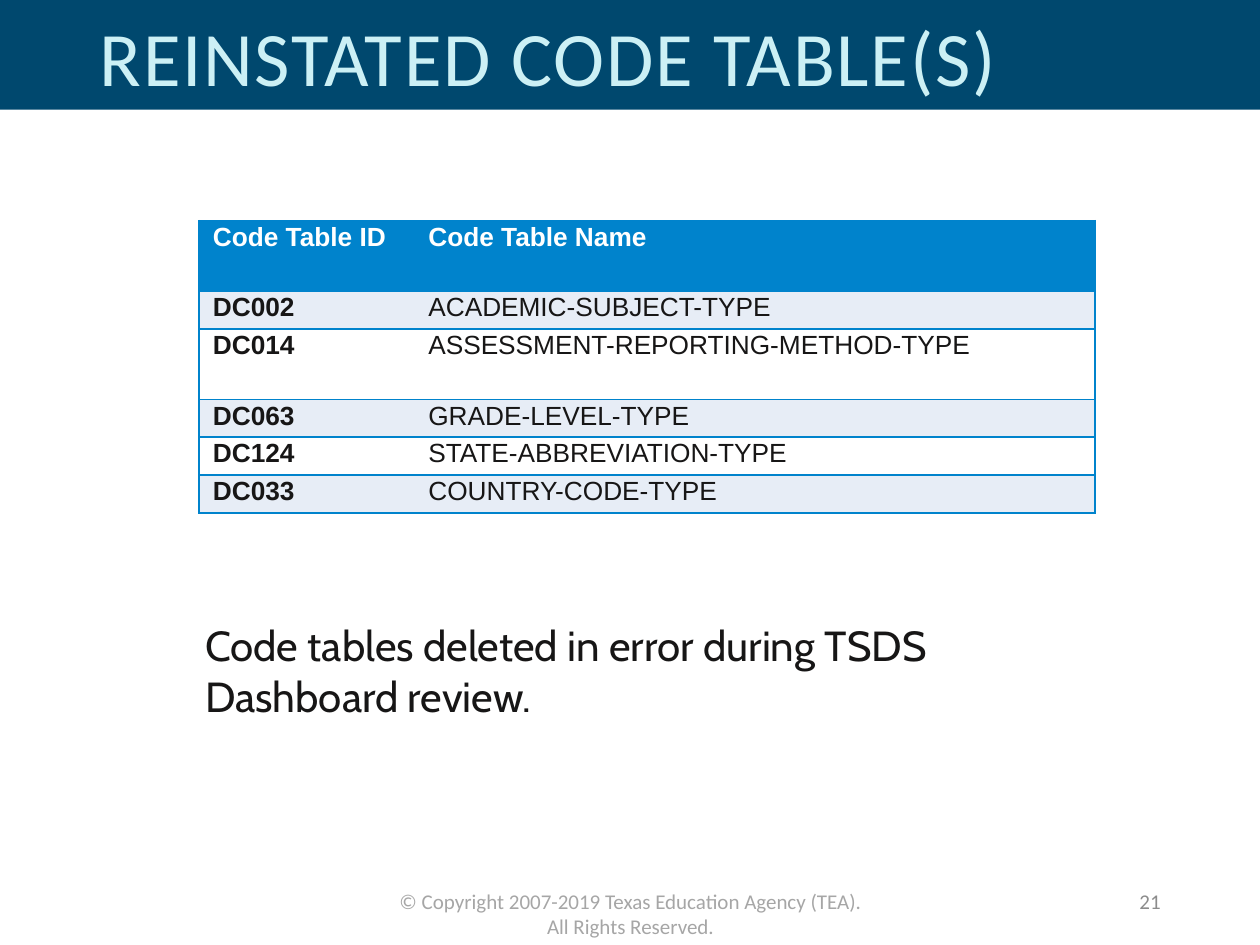
from dataclasses import dataclass, field

from lxml.etree import SubElement
from pptx import Presentation
from pptx.dml.color import RGBColor
from pptx.enum.shapes import MSO_SHAPE as Shape
from pptx.enum.text import MSO_ANCHOR as Anchor, MSO_AUTO_SIZE as AutoSize, PP_ALIGN as Align
from pptx.oxml.ns import qn
from pptx.util import Inches, Pt

NAVY, BLUE, PALE, WHITE, INK = "00486E", "0083CC", "E7EDF6", "FFFFFF", "171616"
COLUMN_WIDTHS = (1.71, 5.4)
SHORT_ROW, TALL_ROW = 0.3, 0.56


@dataclass
class Style:
    size: float
    font: str
    color: str
    bold: bool = False
    paragraph: dict = field(default_factory=dict)


@dataclass
class Label:
    text: str
    place: tuple
    style: Style
    frame: dict = field(default_factory=dict)


@dataclass
class TableRow:
    code: str
    name: str
    height: float = SHORT_ROW


ROWS = [
    TableRow("Code Table ID", "Code Table Name", TALL_ROW),
    TableRow("DC002", "ACADEMIC-SUBJECT-TYPE"),
    TableRow("DC014", "ASSESSMENT-REPORTING-METHOD-TYPE", TALL_ROW),
    TableRow("DC063", "GRADE-LEVEL-TYPE"),
    TableRow("DC124", "STATE-ABBREVIATION-TYPE"),
    TableRow("DC033", "COUNTRY-CODE-TYPE"),
]
LABELS = [
    Label("© Copyright 2007-2019 Texas Education Agency (TEA). All Rights Reserved.",
          (3.04, 7, 3.93, 0.3),
          Style(12, "Calibri", "A6A6A6", paragraph={"alignment": Align.CENTER})),
    Label("21", (7.06, 6.95, 2.25, 0.4),
          Style(12, "Calibri", "8C8C8C",
                paragraph={"alignment": Align.RIGHT, "space_after": Pt(6)}),
          {"vertical_anchor": Anchor.MIDDLE}),
    Label("Code tables deleted in error during TSDS Dashboard review.",
          (1.53, 4.87, 7.22, 0.91), Style(24, "Cabin", INK)),
]


def rgb(value: str) -> RGBColor:
    return RGBColor.from_string(value)


def apply(target, values: dict) -> None:
    for name, value in values.items():
        setattr(target, name, value)


def inches(place: tuple) -> list:
    return [Inches(length) for length in place]


def write(frame, text: str, style: Style):
    para = frame.paragraphs[0]
    apply(para, style.paragraph)
    span = para.add_run()
    span.text = text
    apply(span.font, {"size": Pt(style.size), "name": style.font, "bold": style.bold})
    span.font.color.rgb = rgb(style.color)
    return span


def add_band(page) -> None:
    band = page.shapes.add_shape(Shape.RECTANGLE, *inches((0, 0, 10, 0.87)))
    band.shadow.inherit = False
    band.fill.solid()
    band.fill.fore_color.rgb = rgb(NAVY)
    band.line.fill.background()
    page.shapes._spTree.insert(2, band._element)


def add_title(page, text: str) -> None:
    title = page.shapes.title
    apply(title, dict(zip(("left", "top", "width", "height"), inches((0.69, 0.05, 8, 0.87)))))
    apply(title.text_frame, {"vertical_anchor": Anchor.MIDDLE, "word_wrap": True,
                             "auto_size": AutoSize.NONE})
    style = Style(44, "Calibri", "CCF0F5",
                  paragraph={"alignment": Align.LEFT, "line_spacing": 0.9})
    span = write(title.text_frame, text, style)
    span.font._element.set("spc", "100")


def add_label(page, label: Label) -> None:
    box = page.shapes.add_textbox(*inches(label.place))
    apply(box.text_frame, {"word_wrap": True, **label.frame})
    write(box.text_frame, label.text, label.style)


def set_borders(cell, hidden_side: str) -> None:
    properties = cell._tc.get_or_add_tcPr()
    for side in ("lnL", "lnR", "lnT", "lnB"):
        line = SubElement(properties, qn(f"a:{side}"), w=str(Pt(1)))
        if side == hidden_side:
            SubElement(line, qn("a:noFill"))
        else:
            SubElement(SubElement(line, qn("a:solidFill")), qn("a:srgbClr"), val=BLUE)


def add_code_table(page) -> None:
    size = (sum(COLUMN_WIDTHS), sum(row.height for row in ROWS))
    table = page.shapes.add_table(len(ROWS), len(COLUMN_WIDTHS),
                                  *inches((1.58, 1.75, *size))).table
    apply(table, {"first_row": True, "horz_banding": False})
    for column, width in zip(table.columns, COLUMN_WIDTHS):
        column.width = Inches(width)
    for number, row in enumerate(ROWS):
        table.rows[number].height = Inches(row.height)
        header = number == 0
        fill = BLUE if header else PALE if number % 2 else WHITE
        for position, text in enumerate((row.code, row.name)):
            cell = table.cell(number, position)
            set_borders(cell, "lnL" if position else "lnR")
            apply(cell, {"margin_left": Inches(0.11), "margin_right": Inches(0.11),
                         "margin_top": 0, "margin_bottom": 0})
            cell.fill.solid()
            cell.fill.fore_color.rgb = rgb(fill)
            style = Style(15, "Arial", WHITE if header else INK,
                          header or position == 0, {"line_spacing": 1.07})
            write(cell.text_frame, text, style)


def main() -> None:
    """Build the reinstated code tables slide."""
    deck = Presentation()
    apply(deck, {"slide_width": Inches(10), "slide_height": Inches(7.5)})
    page = deck.slides.add_slide(deck.slide_layouts[5])
    add_band(page)
    add_title(page, "REINSTATED CODE TABLE(S)")
    add_code_table(page)
    for label in LABELS:
        add_label(page, label)
    deck.save("out.pptx")


if __name__ == "__main__":
    main()
